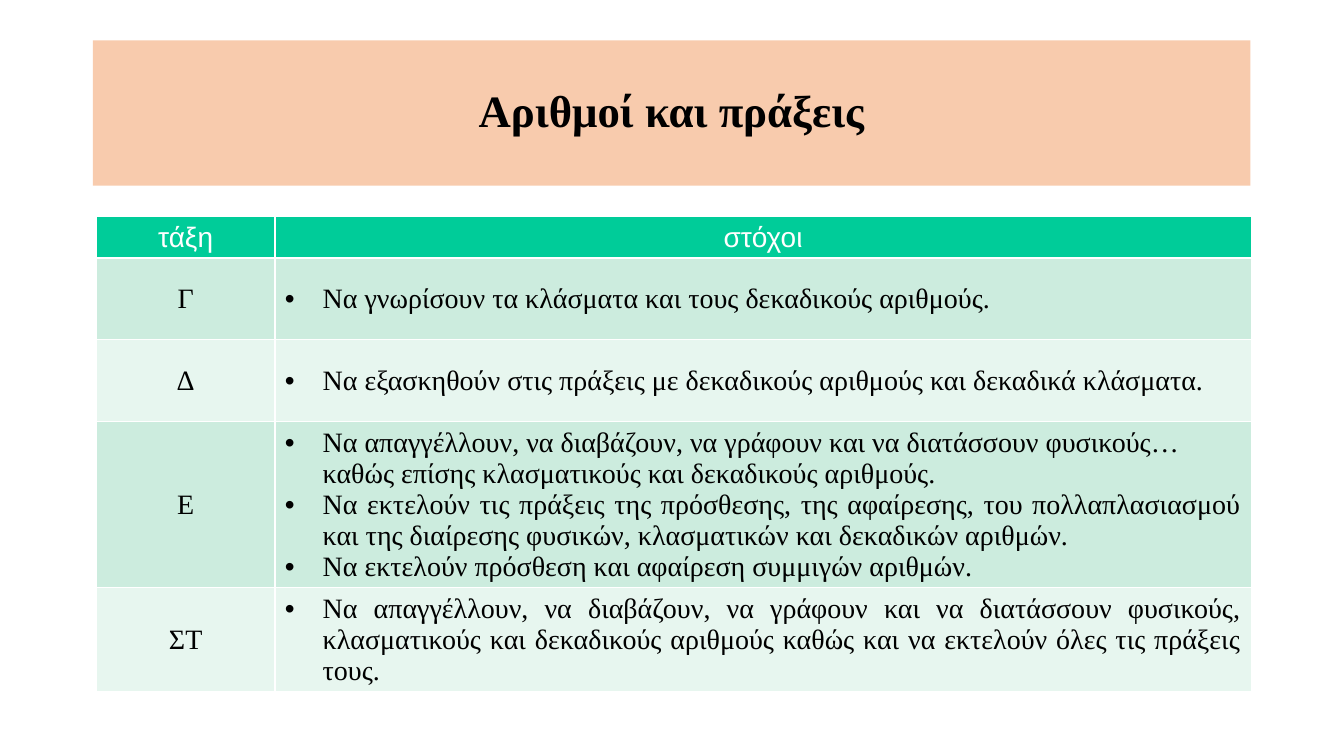
import dataclasses

import lxml.etree
import pptx
import pptx.dml.color
import pptx.enum.text
import pptx.oxml.ns
import pptx.util

Cm = pptx.util.Cm
ALIGN = pptx.enum.text.PP_ALIGN
MIDDLE = pptx.enum.text.MSO_ANCHOR.MIDDLE


@dataclasses.dataclass(frozen=True)
class Theme:
    """Colours, fonts and type sizes of the slide."""
    banner: str = "F8CBAD"
    header: str = "00CC99"
    bands: tuple = ("CCECDE", "E7F6EF")
    border: str = "FFFFFF"
    light: str = "FFFFFF"
    dark: str = "000000"
    serif: str = "Times New Roman"
    sans: str = "Arial"
    title_size: int = 32
    body_size: int = 20


THEME = Theme()
TITLE = "Αριθμοί και πράξεις"
HEADINGS = ("τάξη", "στόχοι")
COLUMN_WIDTHS = (4.5, 24.61)
HEADER_HEIGHT = 1.03
GRADES = (
    ("Γ", 2.06, (("Να γνωρίσουν τα κλάσματα και τους δεκαδικούς αριθμούς.", ALIGN.JUSTIFY),)),
    ("Δ", 2.06, (("Να εξασκηθούν στις πράξεις με δεκαδικούς αριθμούς και δεκαδικά κλάσματα.",
                  ALIGN.JUSTIFY),)),
    ("Ε", 4.19, (
        ("Να απαγγέλλουν, να διαβάζουν, να γράφουν και να διατάσσουν φυσικούς… "
         "καθώς επίσης κλασματικούς και δεκαδικούς αριθμούς.", ALIGN.LEFT),
        ("Να εκτελούν τις πράξεις της πρόσθεσης, της αφαίρεσης, του πολλαπλασιασμού "
         "και της διαίρεσης φυσικών, κλασματικών και δεκαδικών αριθμών.", ALIGN.JUSTIFY),
        ("Να εκτελούν πρόσθεση και αφαίρεση συμμιγών αριθμών.", ALIGN.LEFT),
    )),
    ("ΣΤ", 2.62, (
        ("Να απαγγέλλουν, να διαβάζουν, να γράφουν και να διατάσσουν φυσικούς, "
         "κλασματικούς και δεκαδικούς αριθμούς καθώς και να εκτελούν όλες τις πράξεις τους.",
         ALIGN.JUSTIFY),
    )),
)


def rgb(colour):
    """Turn a hex string into a colour."""
    return pptx.dml.color.RGBColor.from_string(colour)


def add_child(parent, tag, **attributes):
    """Append a DrawingML element with the given attributes."""
    return lxml.etree.SubElement(parent, pptx.oxml.ns.qn(tag), attributes)


def write_text(paragraph, text, font=THEME.serif, size=THEME.body_size, colour=THEME.dark,
               bold=False, align=ALIGN.CENTER, bullet=False):
    """Write one formatted run into a paragraph."""
    paragraph.alignment = align
    run = paragraph.add_run()
    run.text = text
    run.font.name = font
    run.font.size = pptx.util.Pt(size)
    run.font.bold = bold
    run.font.color.rgb = rgb(colour)
    if bullet:
        properties = paragraph._p.get_or_add_pPr()
        indent = Cm(0.95)
        properties.set("marL", str(indent))
        properties.set("indent", str(-indent))
        add_child(properties, "a:buFont", typeface=THEME.sans)
        add_child(properties, "a:buChar", char="•")


def format_cell(cell, colour):
    """Give a cell its borders, fill and anchor."""
    cell.vertical_anchor = MIDDLE
    properties = cell._tc.get_or_add_tcPr()
    for side in ("a:lnL", "a:lnR", "a:lnT", "a:lnB"):
        line = add_child(properties, side, w=str(pptx.util.Pt(1)))
        add_child(add_child(line, "a:solidFill"), "a:srgbClr", val=THEME.border)
    cell.fill.solid()
    cell.fill.fore_color.rgb = rgb(colour)


def format_title(title):
    """Place the title banner and write its text."""
    title.left, title.top, title.width, title.height = Cm(2.34), Cm(1.02), Cm(29.18), Cm(3.66)
    title.fill.solid()
    title.fill.fore_color.rgb = rgb(THEME.banner)
    title.text_frame.vertical_anchor = MIDDLE
    paragraph = title.text_frame.paragraphs[0]
    paragraph.line_spacing = 0.9
    write_text(paragraph, TITLE, size=THEME.title_size, bold=True)


def add_goals_table(slide):
    """Add the table of goals for each school grade."""
    heights = [HEADER_HEIGHT] + [height for _, height, _ in GRADES]
    table = slide.shapes.add_table(len(heights), len(COLUMN_WIDTHS), Cm(2.43), Cm(5.46),
                                   Cm(sum(COLUMN_WIDTHS)), Cm(sum(heights))).table
    for column, width in zip(table.columns, COLUMN_WIDTHS):
        column.width = Cm(width)
    for row, height in zip(table.rows, heights):
        row.height = Cm(height)
    for index, heading in enumerate(HEADINGS):
        cell = table.cell(0, index)
        format_cell(cell, THEME.header)
        write_text(cell.text_frame.paragraphs[0], heading, font=THEME.sans, colour=THEME.light)
    for index, (grade, _, goals) in enumerate(GRADES):
        grade_cell, goals_cell = table.rows[index + 1].cells
        for cell in (grade_cell, goals_cell):
            format_cell(cell, THEME.bands[index % 2])
        write_text(grade_cell.text_frame.paragraphs[0], grade)
        frame = goals_cell.text_frame
        for number, (goal, align) in enumerate(goals):
            paragraph = frame.add_paragraph() if number else frame.paragraphs[0]
            write_text(paragraph, goal, align=align, bullet=True)


def main():
    """Build and save the presentation."""
    presentation = pptx.Presentation()
    presentation.slide_width, presentation.slide_height = Cm(33.88), Cm(19.05)
    slide = presentation.slides.add_slide(presentation.slide_layouts.get_by_name("Title Only"))
    format_title(slide.shapes.title)
    add_goals_table(slide)
    presentation.save("out.pptx")


if __name__ == "__main__":
    main()
